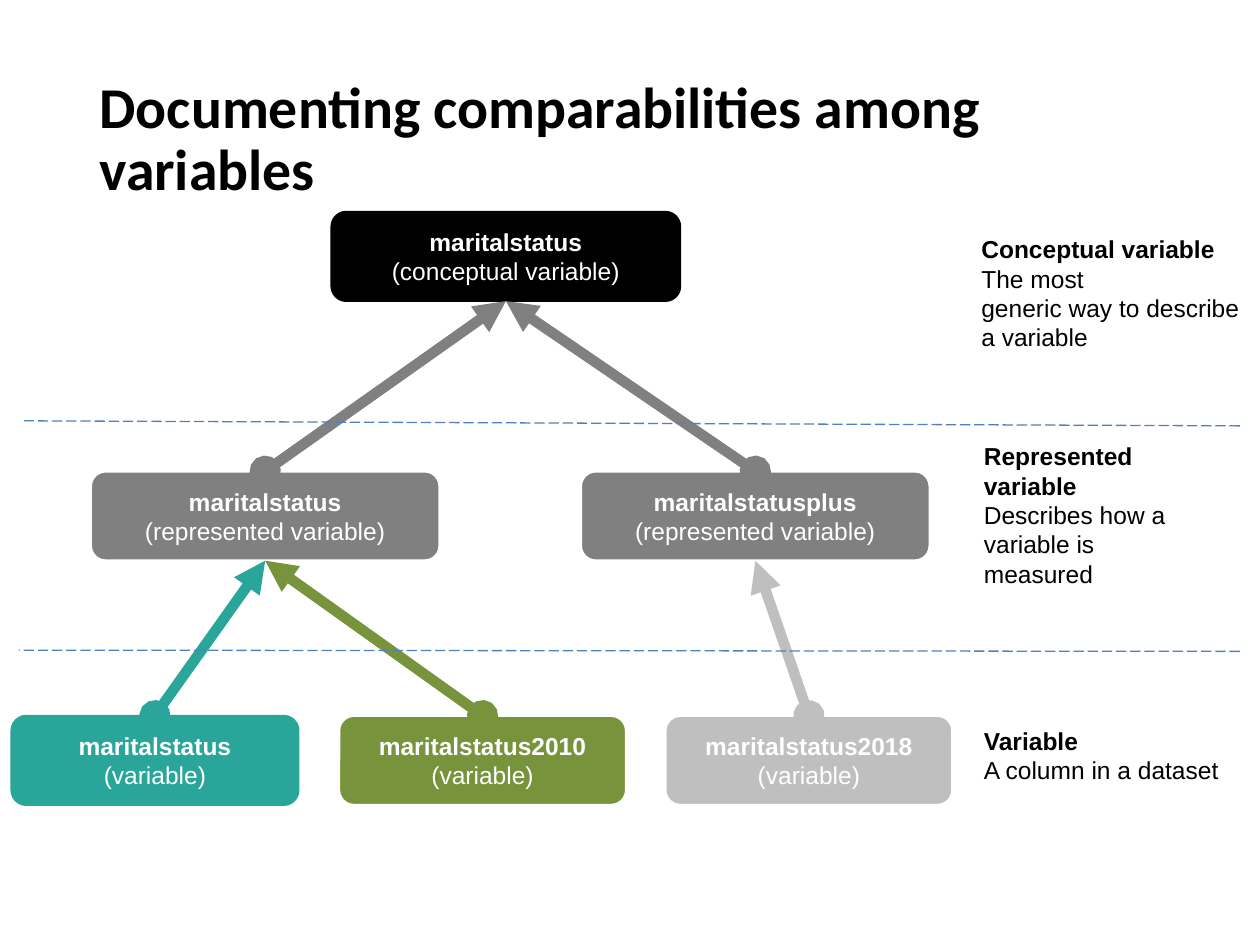
from lxml import etree
from pptx import Presentation
from pptx import util as u
from pptx.dml.color import RGBColor
from pptx.enum import dml, shapes, text
from pptx.oxml import ns

BLACK = RGBColor(0x00, 0x00, 0x00)
WHITE = RGBColor(0xFF, 0xFF, 0xFF)
GRAY = RGBColor(0x80, 0x80, 0x80)
SILVER = RGBColor(0xBF, 0xBF, 0xBF)
TEAL = RGBColor(0x29, 0xA5, 0x99)
OLIVE = RGBColor(0x77, 0x93, 0x3C)
BLUE = RGBColor(0x4F, 0x81, 0xBD)

BOX_HEIGHT = 0.71
CONCEPT_TOP, REPRESENTED_TOP, VARIABLE_TOP = 1.68, 3.74, 5.68
WIDE, NARROW = 2.77, 2.28
TOP, BOTTOM = 0, 2


class SlideBuilder:
    frame = {
        "word_wrap": True,
        "auto_size": text.MSO_AUTO_SIZE.NONE,
        "vertical_anchor": text.MSO_ANCHOR.MIDDLE,
        "margin_left": u.Inches(0.1),
        "margin_right": u.Inches(0.1),
        "margin_top": u.Inches(0.05),
        "margin_bottom": u.Inches(0.05),
    }
    body = {"name": "Arial", "size": u.Pt(14)}
    heading = {"name": "Calibri", "size": u.Pt(33)}

    def __init__(self, slide):
        self.slide = slide

    def apply(self, target, values):
        for name, value in values.items():
            setattr(target, name, value)

    def set_text(self, shape, paragraphs, font, color, align, spacing=None):
        tf = shape.text_frame
        self.apply(tf, self.frame)
        for i, lines in enumerate(paragraphs):
            p = tf.add_paragraph() if i else tf.paragraphs[0]
            self.apply(p, {"alignment": align, "line_spacing": spacing})
            for j, (words, bold) in enumerate(lines):
                if j:
                    p.add_line_break()
                r = p.add_run()
                r.text = words
                self.apply(r.font, {**font, "bold": bold})
                r.font.color.rgb = color

    def title(self, words, left, top, width, height):
        sp = self.slide.shapes.title
        self.apply(sp, {"left": u.Inches(left), "top": u.Inches(top),
                        "width": u.Inches(width), "height": u.Inches(height)})
        self.set_text(sp, [[(words, True)]], self.heading, BLACK, text.PP_ALIGN.LEFT, 0.9)

    def box(self, name, kind, left, top, width, fill, line=WHITE, weight=1.5):
        sp = self.slide.shapes.add_shape(
            shapes.MSO_SHAPE.ROUNDED_RECTANGLE, u.Inches(left), u.Inches(top),
            u.Inches(width), u.Inches(BOX_HEIGHT))
        sp.shadow.inherit = False
        sp.fill.solid()
        sp.fill.fore_color.rgb = fill
        sp.line.color.rgb = line
        sp.line.width = u.Pt(weight)
        self.set_text(sp, [[(name, True), (f"({kind})", False)]],
                      self.body, WHITE, text.PP_ALIGN.CENTER)
        return sp

    def note(self, paragraphs, left, top, width):
        sp = self.slide.shapes.add_textbox(
            u.Inches(left), u.Inches(top), u.Inches(width), u.Inches(1.21))
        self.set_text(sp, paragraphs, self.body, BLACK, text.PP_ALIGN.LEFT)

    def line(self, start, end, color, weight):
        s = self.slide.shapes.add_connector(
            shapes.MSO_CONNECTOR.STRAIGHT, *map(u.Inches, start + end))
        s.line.color.rgb = color
        s.line.width = u.Pt(weight)
        etree.SubElement(s._element.spPr, ns.qn("a:effectLst"))
        return s

    def arrow(self, child, parent, color):
        s = self.line((0, 0), (0, 0), color, 6)
        s.begin_connect(child, TOP)
        s.end_connect(parent, BOTTOM)
        ln = s._element.spPr.find(ns.qn("a:ln"))
        for tag, kind in (("a:headEnd", "oval"), ("a:tailEnd", "triangle")):
            etree.SubElement(ln, ns.qn(tag), type=kind)

    def divider(self, start, end):
        self.line(start, end, BLUE, 0.75).line.dash_style = dml.MSO_LINE.LONG_DASH


def main():
    prs = Presentation()
    prs.slide_width, prs.slide_height = u.Inches(10), u.Inches(7.5)
    s = SlideBuilder(prs.slides.add_slide(prs.slide_layouts[5]))

    s.title("Documenting comparabilities among variables", 0.69, 0.39, 8.66, 1.45)

    concept = s.box("maritalstatus", "conceptual variable",
                    2.63, CONCEPT_TOP, WIDE, BLACK, BLACK, 1)
    status, plus = [
        s.box(name, "represented variable", left, REPRESENTED_TOP, WIDE, GRAY)
        for name, left in (("maritalstatus", 0.72), ("maritalstatusplus", 4.61))]
    base = s.box("maritalstatus", "variable", 0.09, VARIABLE_TOP, NARROW, TEAL, TEAL, 1)
    v2010, v2018 = [
        s.box(name, "variable", left, VARIABLE_TOP, NARROW, color)
        for name, left, color in (("maritalstatus2010", 2.69, OLIVE),
                                  ("maritalstatus2018", 5.28, SILVER))]

    for child, parent, color in (
            (v2010, status, OLIVE), (base, status, TEAL), (status, concept, GRAY),
            (v2018, plus, SILVER), (plus, concept, GRAY)):
        s.arrow(child, parent, color)

    s.divider((9.84, 3.38), (0.19, 3.34))
    s.divider((9.84, 5.17), (0.15, 5.16))

    s.note([[("Conceptual variable", True), ("The most", False)],
            [("generic way to describe a variable", False)]], 7.69, 1.72, 2.31)
    s.note([[("Represented variable", True)],
            [("Describes how a variable is measured", False)]], 7.71, 3.48, 1.95)
    s.note([[("Variable", True)],
            [("A column in a dataset", False)]], 7.71, 5.39, 2.49)

    prs.save("out.pptx")


if __name__ == "__main__":
    main()
